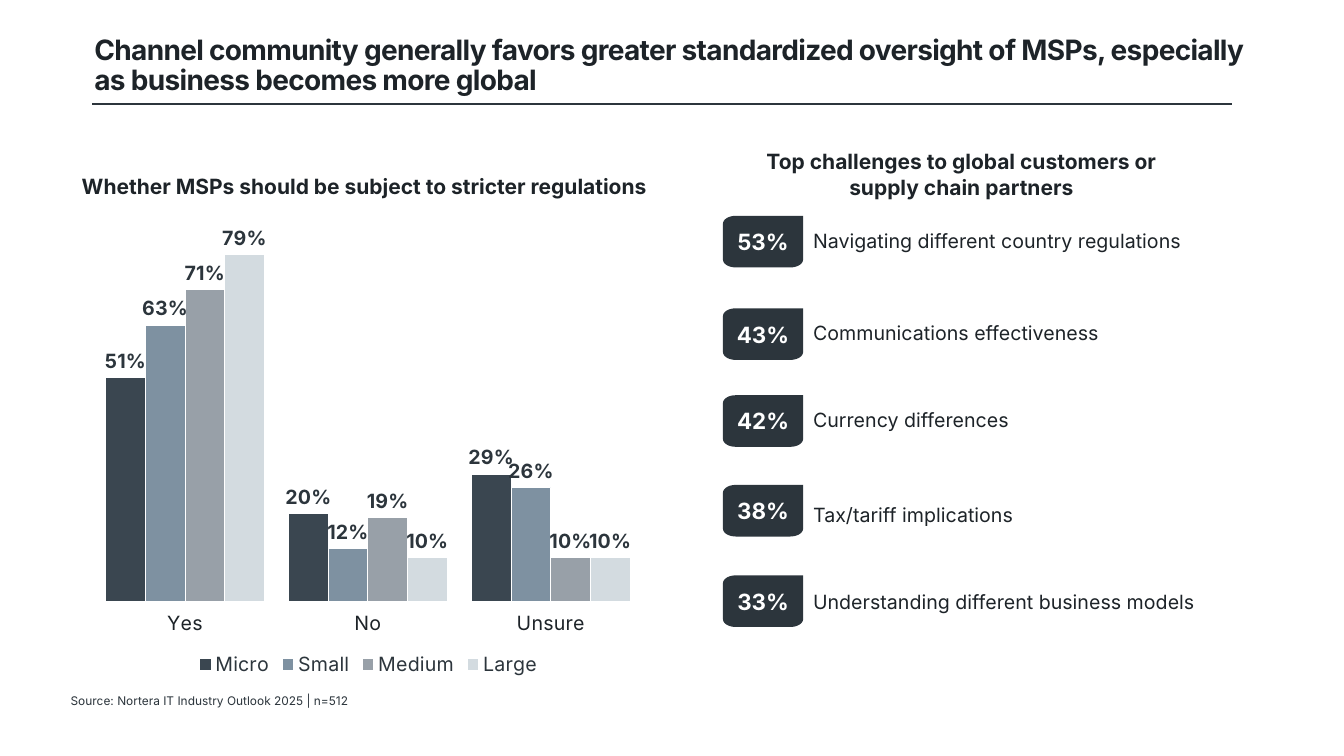
import math
from collections import namedtuple
from dataclasses import dataclass

from lxml import etree
from pptx import Presentation
from pptx import util as u
from pptx.chart.data import CategoryChartData
from pptx.dml.color import RGBColor
from pptx.enum import chart as ch, shapes, text
from pptx.oxml import parse_xml
from pptx.oxml.ns import nsdecls, qn

Box = namedtuple("Box", "left top width height")  # centimetres


@dataclass(frozen=True)
class Theme:
    font: str = "Inter"
    ink: str = "1D2328"
    slate: str = "2C353C"
    white: str = "FFFFFF"
    bars: tuple = ("3A4650", "7E91A1", "98A0A8", "D3DBE0")
    title: float = 20
    heading: float = 15
    body: float = 14
    badge: float = 16
    source: float = 8.5


THEME = Theme()
SIZES = {
    "Micro": (0.51, 0.20, 0.29),
    "Small": (0.63, 0.12, 0.26),
    "Medium": (0.71, 0.19, 0.10),
    "Large": (0.79, 0.10, 0.10),
}
# share, challenge, top of badge, drop from badge top to label top
CHALLENGES = (
    ("53%", "Navigating different country regulations", 5.44, 0.2),
    ("43%", "Communications effectiveness", 7.77, 0.2),
    ("42%", "Currency differences", 9.96, 0.2),
    ("38%", "Tax/tariff implications", 12.22, 0.33),
    ("33%", "Understanding different business models", 14.5, 0.23),
)


def cm(box):
    return [u.Cm(length) for length in box]


def style_font(font, size, color, bold=False):
    font.name = THEME.font
    font.size = u.Pt(size)
    font.bold = bold
    font.color.rgb = RGBColor.from_string(color)


def write(shape, words, size, color, bold=False, align=text.PP_ALIGN.LEFT,
          anchor=text.MSO_ANCHOR.TOP, inset=True):
    frame = shape.text_frame
    frame.word_wrap = True
    frame.vertical_anchor = anchor
    if not inset:
        frame.margin_left = frame.margin_right = 0
        frame.margin_top = frame.margin_bottom = 0
    para = frame.paragraphs[0]
    para.alignment = align
    span = para.add_run()
    span.text = words
    style_font(span.font, size, color, bold)
    return para


def add_text(page, box, words, size, color, **options):
    return write(page.shapes.add_textbox(*cm(box)), words, size, color, **options)


def add_title(page, box):
    para = add_text(
        page, box,
        "Channel community generally favors greater standardized oversight "
        "of MSPs, especially as business becomes more global",
        THEME.title, THEME.ink, bold=True, anchor=text.MSO_ANCHOR.MIDDLE)
    para.line_spacing = 0.9
    para.runs[0].font._element.set("spc", "-50")
    left, right, rule_top = box.left + 0.2, box.left + 28.93, box.top + 1.83
    rule = page.shapes.add_connector(
        shapes.MSO_CONNECTOR.STRAIGHT, *cm((left, rule_top, right, rule_top)))
    rule.line.color.rgb = RGBColor.from_string(THEME.slate)
    rule.line.width = u.Pt(1)
    etree.SubElement(rule._element.spPr, qn("a:effectLst"))


def set_plot_layout(chart, x, y, width, height):
    """Fix the inner plot area, in fractions of the chart."""
    area = chart._chartSpace.chart.plotArea
    for layout in area.findall(qn("c:layout")):
        area.remove(layout)
    parts = "".join(f'<c:{tag} val="{value}"/>' for tag, value in (
        ("layoutTarget", "inner"), ("xMode", "edge"), ("yMode", "edge"),
        ("x", x), ("y", y), ("w", width), ("h", height)))
    area.insert(0, parse_xml(
        f'<c:layout {nsdecls("c")}><c:manualLayout>{parts}</c:manualLayout></c:layout>'))


def add_regulation_chart(page, box):
    add_text(page, Box(box.left - 0.58, box.top - 1.45, 14.81, 0.89),
             "Whether MSPs should be subject to stricter regulations",
             THEME.heading, THEME.ink, bold=True, align=text.PP_ALIGN.CENTER)
    data = CategoryChartData(number_format="0%")
    data.categories = ("Yes", "No", "Unsure")
    for name, values in SIZES.items():
        data.add_series(name, values)
    chart = page.shapes.add_chart(
        ch.XL_CHART_TYPE.COLUMN_CLUSTERED, *cm(box), data).chart
    style_font(chart.font, THEME.body, THEME.ink)
    chart.has_title = False
    chart.has_legend = True
    chart.legend.position = ch.XL_LEGEND_POSITION.BOTTOM
    chart.legend.include_in_layout = False
    style_font(chart.legend.font, THEME.body, THEME.slate)

    chart.value_axis.minimum_scale = 0
    chart.value_axis.maximum_scale = 0.82
    chart.value_axis.has_major_gridlines = False
    chart.value_axis.visible = False
    chart.category_axis.format.line.fill.background()
    style_font(chart.category_axis.tick_labels.font, THEME.body, THEME.ink)

    plot = chart.plots[0]
    plot.gap_width = 61
    plot.overlap = 0
    plot.vary_by_categories = False
    for series, color in zip(plot.series, THEME.bars):
        series.format.fill.solid()
        series.format.fill.fore_color.rgb = RGBColor.from_string(color)
        series.format.line.color.rgb = RGBColor.from_string(THEME.white)
        series.format.line.width = u.Pt(0.75)
        labels = series.data_labels
        labels.show_value = True
        labels.number_format = "0%"
        labels.number_format_is_linked = False
        labels.position = ch.XL_LABEL_POSITION.OUTSIDE_END
        style_font(labels.font, THEME.body, THEME.slate, bold=True)
    set_plot_layout(chart, 0, 0.035, 0.999, 0.791)


def add_badge(page, box, share):
    """Dark tile with every corner rounded but the top right."""
    radius_x, radius_y = 0.32, 0.2
    right, bottom = box.left + box.width, box.top + box.height
    corners = (
        (right - radius_x, bottom - radius_y, 0),
        (box.left + radius_x, bottom - radius_y, 90),
        (box.left + radius_x, box.top + radius_y, 180),
    )
    points = []
    for center_x, center_y, start in corners:
        for angle in range(start, start + 91, 10):
            turn = math.radians(angle)
            points.append((u.Cm(center_x + radius_x * math.cos(turn)),
                           u.Cm(center_y + radius_y * math.sin(turn))))
    builder = page.shapes.build_freeform(u.Cm(right), u.Cm(box.top))
    builder.add_line_segments(points, close=True)
    badge = builder.convert_to_shape()
    badge.shadow.inherit = False
    badge.fill.solid()
    badge.fill.fore_color.rgb = RGBColor.from_string(THEME.slate)
    badge.line.fill.background()
    write(badge, share, THEME.badge, THEME.white, bold=True, inset=False,
          align=text.PP_ALIGN.CENTER, anchor=text.MSO_ANCHOR.MIDDLE)


def add_challenges(page, box):
    add_text(page, Box(box.left + 0.7, box.top, 10.62, 1.55),
             "Top challenges to global customers or supply chain partners",
             THEME.heading, THEME.ink, bold=True, align=text.PP_ALIGN.CENTER)
    badge_width = 2.02
    for share, challenge, top, drop in CHALLENGES:
        add_badge(page, Box(box.left, top, badge_width, 1.3), share)
        add_text(page, Box(box.left + badge_width, top + drop,
                           box.width - badge_width, 0.86),
                 challenge, THEME.body, THEME.ink)


def main():
    deck = Presentation()
    deck.slide_width, deck.slide_height = u.Cm(33.87), u.Cm(19.05)
    page = deck.slides.add_slide(deck.slide_layouts[6])
    add_title(page, Box(2.13, 0.79, 30.23, 1.78))
    add_regulation_chart(page, Box(2.36, 5.69, 13.84, 11.46))
    add_challenges(page, Box(18.22, 3.63, 12.87, 12.2))
    add_text(page, Box(1.78, 17.4, 17.78, 0.51),
             "Source: Nortera IT Industry Outlook 2025 | n=512",
             THEME.source, THEME.slate, anchor=text.MSO_ANCHOR.MIDDLE, inset=False)
    deck.save("out.pptx")


if __name__ == "__main__":
    main()
